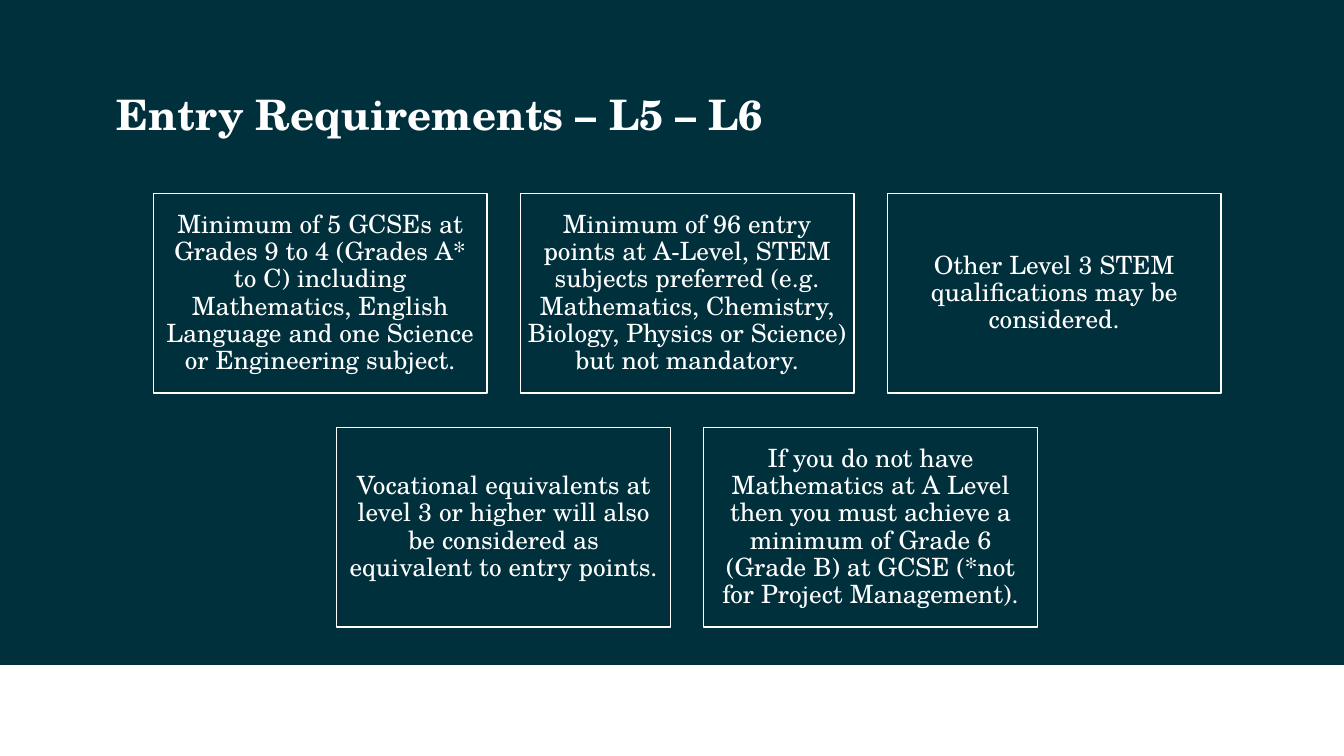
import pptx
import pptx.util
import pptx.dml.color
import pptx.enum.shapes
import pptx.enum.text

Inches = pptx.util.Inches
Pt = pptx.util.Pt
RGBColor = pptx.dml.color.RGBColor
ALIGN = pptx.enum.text.PP_ALIGN
ANCHOR = pptx.enum.text.MSO_ANCHOR
RECT = pptx.enum.shapes.MSO_SHAPE.RECTANGLE

TEAL = RGBColor(0x00, 0x30, 0x3C)
WHITE = RGBColor(0xFF, 0xFF, 0xFF)
FONT = "TeX Gyre Schola"

WIDE, HIGH = 13.33, 7.5
BOX_W, BOX_H = 3.31, 1.98
GAP_X, GAP_Y = 0.33, 0.34
MID, TOP = 6.815, 1.92

ROWS = [
    [
        "Minimum of 5 GCSEs at Grades 9 to 4 (Grades A* to C) including "
        "Mathematics, English Language and one Science or Engineering subject.",
        "Minimum of 96 entry points at A-Level, STEM subjects preferred (e.g. "
        "Mathematics, Chemistry, Biology, Physics or Science) but not mandatory.",
        "Other Level 3 STEM qualifications may be considered.",
    ],
    [
        "Vocational equivalents at level 3 or higher will also be considered as "
        "equivalent to entry points.",
        "If you do not have Mathematics at A Level then you must achieve a "
        "minimum of Grade 6 (Grade B) at GCSE (*not for Project Management).",
    ],
]


def add_rect(left, top, width, height, fill):
    rect = slide.shapes.add_shape(
        RECT, Inches(left), Inches(top), Inches(width), Inches(height))
    rect.shadow.inherit = False
    rect.fill.solid()
    rect.fill.fore_color.rgb = fill
    return rect


def add_text(frame, text, size, align, bold=False):
    para = frame.paragraphs[0]
    para.alignment = align
    para.line_spacing = 0.9
    run = para.add_run()
    run.text = text
    run.font.name = FONT
    run.font.size = Pt(size)
    run.font.bold = bold
    run.font.color.rgb = WHITE


# Slide and background
deck = pptx.Presentation()
deck.slide_width = Inches(WIDE)
deck.slide_height = Inches(HIGH)
slide = deck.slides.add_slide(deck.slide_layouts[5])
slide.background.fill.solid()
slide.background.fill.fore_color.rgb = TEAL

# White band at the foot
band = add_rect(0, 6.6, WIDE, 0.9, WHITE)
band.line.fill.background()

# Title
title = slide.shapes.title
title.left, title.top = Inches(1.06), Inches(0.88)
title.width, title.height = Inches(11.5), Inches(0.93)
title.text_frame.vertical_anchor = ANCHOR.TOP
add_text(title.text_frame, "Entry Requirements – L5 – L6", 30, ALIGN.LEFT, True)

# Requirement boxes, each row centred
for row, texts in enumerate(ROWS):
    span = len(texts) * (BOX_W + GAP_X) - GAP_X
    for col, text in enumerate(texts):
        left = MID - span / 2 + col * (BOX_W + GAP_X)
        top = TOP + row * (BOX_H + GAP_Y)
        box = add_rect(left, top, BOX_W, BOX_H, TEAL)
        box.line.color.rgb = WHITE
        box.line.width = Pt(1)
        frame = box.text_frame
        frame.word_wrap = True
        frame.vertical_anchor = ANCHOR.MIDDLE
        frame.margin_left = frame.margin_right = Inches(0.07)
        frame.margin_top = frame.margin_bottom = Inches(0.07)
        add_text(frame, text, 18, ALIGN.CENTER)

deck.save("out.pptx")
